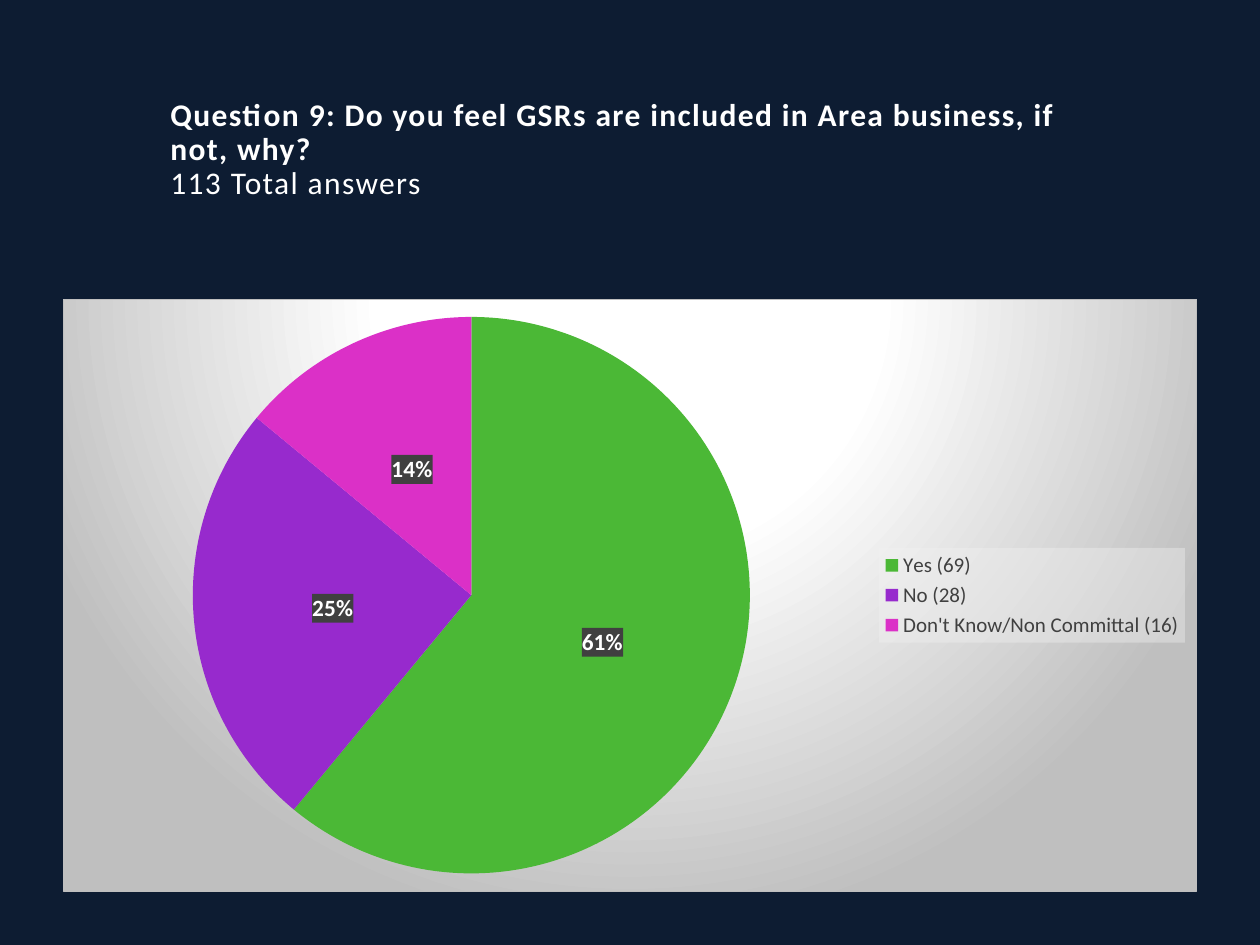
from lxml.etree import fromstring
from pptx import Presentation
from pptx.chart.data import CategoryChartData
from pptx.dml.color import RGBColor
from pptx.enum.chart import XL_CHART_TYPE, XL_LABEL_POSITION, XL_LEGEND_POSITION
from pptx.enum.text import MSO_ANCHOR, MSO_AUTO_SIZE, PP_ALIGN
from pptx.oxml.ns import nsdecls, qn
from pptx.util import Cm, Pt

FONT = "Calibri"
WHITE = "FFFFFF"


def rgb(code):
    return RGBColor.from_string(code)


def style_font(font, size, color, bold=False):
    font.name, font.size, font.bold = FONT, Pt(size), bold
    font.color.rgb = rgb(color)


def box_xml(fill, line="<a:ln><a:noFill/></a:ln>"):
    return fromstring(f'<c:spPr {nsdecls("c", "a")}>{fill}{line}</c:spPr>')


def clear_fill(color, opacity):
    return (f'<a:solidFill><a:srgbClr val="{color}"><a:alpha val="{opacity * 1000}"/>'
            '</a:srgbClr></a:solidFill>')


def layout_xml(x, y, w, h, inner=False):
    target = '<c:layoutTarget val="inner"/>' if inner else ""
    modes = '<c:xMode val="edge"/><c:yMode val="edge"/>'
    sizes = "".join(f'<c:{k} val="{v}"/>' for k, v in zip("xywh", (x, y, w, h)))
    return fromstring(f'<c:layout {nsdecls("c")}><c:manualLayout>{target}{modes}{sizes}'
                      '</c:manualLayout></c:layout>')


class SlideBuilder:
    def __init__(self, prs, background):
        self.s = prs.slides.add_slide(prs.slide_layouts[5])
        fill = self.s.background.fill
        fill.solid()
        fill.fore_color.rgb = rgb(background)

    def title(self, question, total, box):
        sp = self.s.shapes.title
        sp.left, sp.top, sp.width, sp.height = map(Cm, box)
        tf = sp.text_frame
        tf.word_wrap, tf.auto_size = True, MSO_AUTO_SIZE.NONE
        tf.vertical_anchor, tf.margin_bottom = MSO_ANCHOR.BOTTOM, Cm(0.83)
        tf.text = f"{question}\v{total}"
        p = tf.paragraphs[0]
        p.alignment, p.line_spacing = PP_ALIGN.LEFT, 0.9
        for r, bold in zip(p.runs, (True, False)):
            style_font(r.font, 18, WHITE, bold)
            r.font._element.set("spc", "80")

    def pie(self, answers, box):
        data = CategoryChartData()
        data.categories = [name for name, _, _ in answers]
        data.add_series("Series 1", [value for _, value, _ in answers])
        chart = self.s.shapes.add_chart(XL_CHART_TYPE.PIE, *map(Cm, box), data).chart
        chart.has_title = False
        style_font(chart.font, 10, WHITE)
        self.chart_area(chart)
        plot = chart.plots[0]
        plot.vary_by_categories = True
        for i, (_, _, color) in enumerate(answers):
            fill = plot.series[0].points[i].format.fill
            fill.solid()
            fill.fore_color.rgb = rgb(color)
        self.labels(plot.series[0].data_labels)
        self.legend(chart)

    def chart_area(self, chart):
        # Radial grey backdrop with a thin border
        stops = "".join(f'<a:gs pos="{pos * 1000}"><a:srgbClr val="{color}"/></a:gs>'
                        for pos, color in ((0, WHITE), (39, WHITE), (100, "BFBFBF")))
        fill = (f'<a:gradFill><a:gsLst>{stops}</a:gsLst><a:path path="circle">'
                '<a:fillToRect l="50000" t="-80000" r="50000" b="180000"/></a:path></a:gradFill>')
        line = '<a:ln w="9525"><a:solidFill><a:srgbClr val="BFBFBF"/></a:solidFill></a:ln>'
        body = chart._chartSpace.find(qn("c:chart"))
        body.addnext(box_xml(fill, line))
        plot_area = body.find(qn("c:plotArea"))
        for old in plot_area.findall(qn("c:layout")):
            plot_area.remove(old)
        plot_area.insert(0, layout_xml(0.11, 0.03, 0.5, 0.94, inner=True))

    def labels(self, labels):
        labels.show_percentage, labels.show_value = True, False
        labels.number_format, labels.number_format_is_linked = "0%", False
        labels.position = XL_LABEL_POSITION.CENTER
        style_font(labels.font, 13.3, WHITE, bold=True)
        labels._element.find(qn("c:numFmt")).addnext(box_xml(clear_fill("404040", 90)))

    def legend(self, chart):
        chart.has_legend = True
        legend = chart.legend
        legend.position, legend.include_in_layout = XL_LEGEND_POSITION.RIGHT, False
        style_font(legend.font, 12, "404040")
        xml = legend._element
        for old in xml.findall(qn("c:layout")):
            xml.remove(old)
        xml.find(qn("c:legendPos")).addnext(layout_xml(0.72, 0.42, 0.27, 0.16))
        xml.find(qn("c:overlay")).addnext(box_xml(clear_fill("F2F2F2", 39)))


def main():
    prs = Presentation()
    prs.slide_width, prs.slide_height = Cm(25.4), Cm(19.05)
    slide = SlideBuilder(prs, "0D1C32")
    # Question and number of answers
    slide.title("Question 9: Do you feel GSRs are included in Area business, if not, why? ",
                "113 Total answers", (3.18, 1.07, 19.05, 3.81))
    # Share of each answer, in percent
    slide.pie([("Yes (69)", 61, "4BB836"),
               ("No (28)", 25, "972ACD"),
               ("Don't Know/Non Committal (16)", 14, "DB30C7")],
              (1.27, 6.02, 22.86, 11.96))
    prs.save("out.pptx")


if __name__ == "__main__":
    main()
